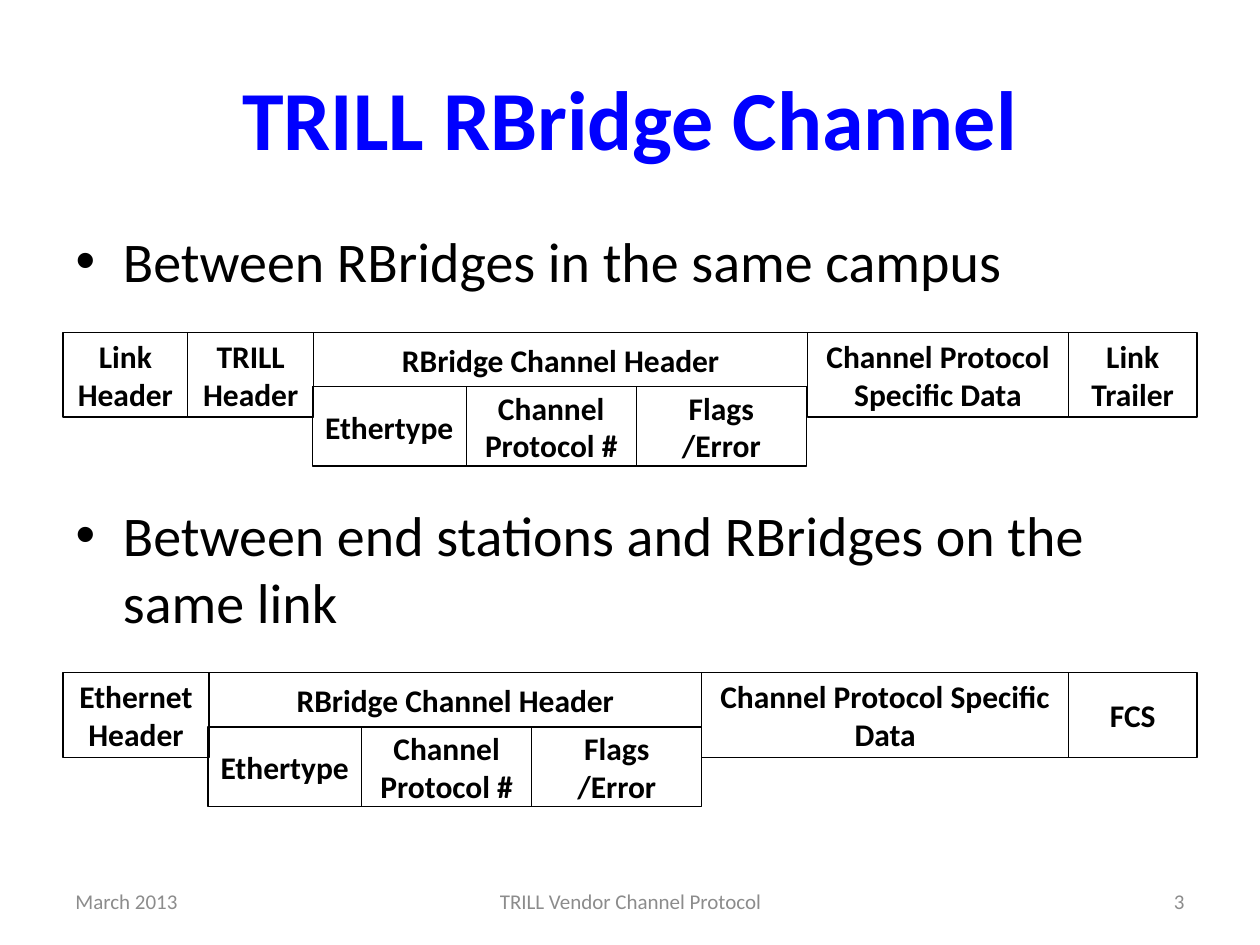
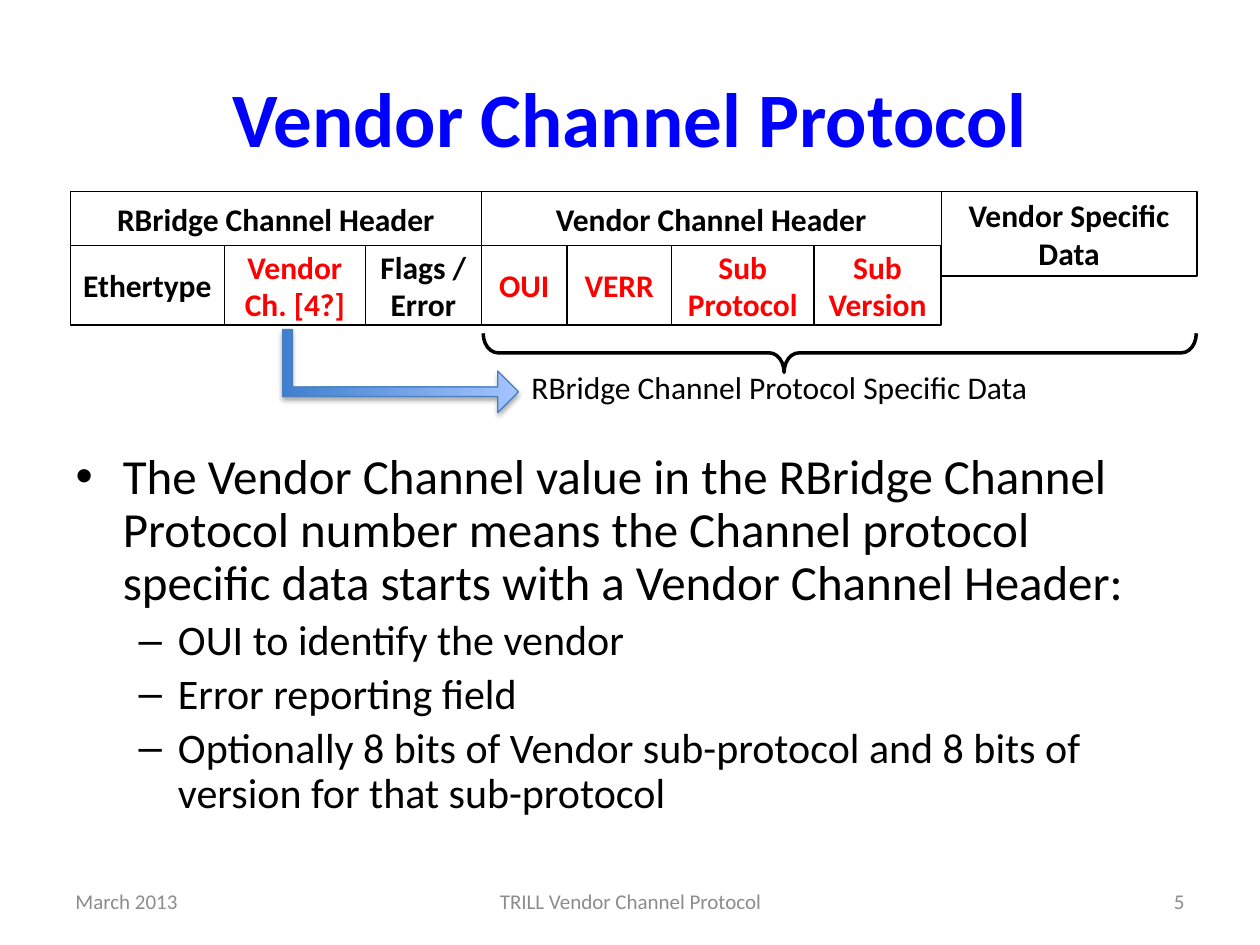
from itertools import accumulate
from lxml.etree import SubElement
from pptx import Presentation
from pptx.dml.color import RGBColor
from pptx.enum.shapes import MSO_SHAPE
from pptx.enum.text import MSO_ANCHOR, MSO_AUTO_SIZE, PP_ALIGN
from pptx.oxml.ns import qn
from pptx.util import Emu, Pt

PX = 9144
BLACK, BLUE, RED, GREY = "000000", "0000FF", "FF0000", "8C8C8C"
FULL, TOP, SUB = 67, 43, 63


def px(*lengths):
    return [Emu(n * PX) for n in lengths]


def rgb(color):
    return RGBColor.from_string(color)


class Deck:
    font = "Calibri"

    def __init__(self):
        self.prs = Presentation()
        self.prs.slide_width, self.prs.slide_height = px(1000, 750)
        self.s = None

    def style(self, p, size, color=BLACK, bold=False, align=None):
        p.alignment = align
        for r in p.runs:
            r.font.name = self.font
            r.font.size = Pt(size)
            r.font.bold = bold
            r.font.color.rgb = rgb(color)

    def place(self, sp, *box):
        sp.left, sp.top, sp.width, sp.height = px(*box)

    def slide(self, title, title_size, number):
        self.s = self.prs.slides.add_slide(self.prs.slide_layouts[1])
        sp = self.s.shapes.title
        self.place(sp, 50, 30, 900, 125)
        tf = sp.text_frame
        tf.text = title
        tf.auto_size = MSO_AUTO_SIZE.NONE
        tf.vertical_anchor = MSO_ANCHOR.MIDDLE
        self.style(tf.paragraphs[0], title_size, BLUE, True, PP_ALIGN.CENTER)
        for text, x, w, align in (
            ("March 2013", 50, 233, PP_ALIGN.LEFT),
            ("TRILL Vendor Channel Protocol", 342, 317, PP_ALIGN.CENTER),
            (number, 717, 233, PP_ALIGN.RIGHT),
        ):
            self.text(text, (x, 695, w, 40), 12, GREY, align)

    def text(self, text, box, size, color=BLACK, align=PP_ALIGN.LEFT):
        tf = self.s.shapes.add_textbox(*px(*box)).text_frame
        tf.word_wrap = True
        tf.vertical_anchor = MSO_ANCHOR.MIDDLE
        tf.text = text
        self.style(tf.paragraphs[0], size, color, align=align)

    def bullets(self, box, items, sizes, line_spacing=None, gap=None):
        sp = self.s.placeholders[1]
        self.place(sp, *box)
        tf = sp.text_frame
        tf.auto_size = MSO_AUTO_SIZE.NONE
        tf.text = "\n".join(text for text, level in items)
        for i, (p, (text, level)) in enumerate(zip(tf.paragraphs, items)):
            p.level = level
            p.line_spacing = line_spacing
            if gap and i:
                p.space_before = Pt(gap)
            self.style(p, sizes[level])

    def shape(self, kind, box, line_width=0.75, line=BLACK):
        sp = self.s.shapes.add_shape(kind, *px(*box))
        sp.shadow.inherit = False
        sp.fill.background()
        sp.line.color.rgb = rgb(line)
        sp.line.width = Pt(line_width)
        return sp

    def row(self, x, y, cells):
        widths = [w for text, w, h, color in cells]
        lefts = accumulate(widths, initial=x)
        for left, (text, w, h, color) in zip(lefts, cells):
            tf = self.shape(MSO_SHAPE.RECTANGLE, (left, y, w, h)).text_frame
            tf.word_wrap = True
            tf.vertical_anchor = MSO_ANCHOR.MIDDLE
            tf.text = text
            self.style(tf.paragraphs[0], 18, color, True, PP_ALIGN.CENTER)

    def channel_fields(self, x, y):
        self.row(x, y + TOP, [
            ("Ethertype", 122, SUB, BLACK),
            ("Channel Protocol #", 135, SUB, BLACK),
            ("Flags\v/Error", 135, SUB, BLACK),
        ])

    def brace(self, box):
        sp = self.shape(MSO_SHAPE.LEFT_BRACE, box, 2)
        sp.rotation = 270
        sp.adjustments[0], sp.adjustments[1] = 0.38, 0.422

    def bent_arrow(self, box):
        sp = self.shape(MSO_SHAPE.BENT_UP_ARROW, box, line="4B7EBC")
        sp.rotation = 90
        for i, value in enumerate((0.116, 0.25, 0.25)):
            sp.adjustments[i] = value
        sp.fill.gradient()
        sp.fill.gradient_angle = 90
        for stop, color in zip(sp.fill.gradient_stops, ("3F80CE", "A4C4FF")):
            stop.color.rgb = rgb(color)
        effects = sp._element.spPr.find(qn("a:effectLst"))
        shadow = SubElement(effects, qn("a:outerShdw"), blurRad=str(Pt(3.1)),
                            dist=str(Pt(1.8)), dir="5400000", rotWithShape="0")
        color = SubElement(shadow, qn("a:srgbClr"), val=BLACK)
        SubElement(color, qn("a:alpha"), val="35000")


def rbridge_channel(deck):
    deck.slide("TRILL RBridge Channel", 48, "3")
    deck.bullets((50, 175, 900, 520), [
        ("Between RBridges in the same campus", 0),
        ("Between end stations and RBridges on the same link", 0),
    ], (32,), gap=118)
    deck.row(50, 264, [
        ("Link Header", 99, FULL, BLACK),
        ("TRILL Header", 100, FULL, BLACK),
        ("RBridge Channel Header", 392, TOP, BLACK),
        ("Channel Protocol Specific Data", 207, FULL, BLACK),
        ("Link Trailer", 102, FULL, BLACK),
    ])
    deck.channel_fields(248, 264)
    deck.row(50, 534, [
        ("Ethernet Header", 116, FULL, BLACK),
        ("RBridge Channel Header", 391, TOP, BLACK),
        ("Channel Protocol Specific Data", 291, FULL, BLACK),
        ("FCS", 102, FULL, BLACK),
    ])
    deck.channel_fields(165, 534)


def vendor_channel(deck):
    deck.slide("Vendor Channel Protocol", 44, "5")
    deck.bullets((50, 354, 900, 316), [
        ("The Vendor Channel value in the RBridge Channel Protocol number means "
         "the Channel protocol specific data starts with a Vendor Channel Header:", 0),
        ("OUI to identify the vendor", 1),
        ("Error reporting field", 1),
        ("Optionally 8 bits of Vendor sub-protocol and 8 bits of version "
         "for that sub-protocol", 1),
    ], (28, 24), line_spacing=0.9)
    deck.row(56, 152, [
        ("RBridge Channel Header", 326, TOP, BLACK),
        ("Vendor Channel Header", 365, TOP, BLACK),
        ("Vendor Specific Data", 203, FULL, BLACK),
    ])
    deck.row(56, 152 + TOP, [
        ("Ethertype", 122, SUB, BLACK),
        ("Vendor\vCh. [4?]", 112, SUB, RED),
        ("Flags /Error", 92, SUB, BLACK),
        ("OUI", 68, SUB, RED),
        ("VERR", 83, SUB, RED),
        ("Sub Protocol", 113, SUB, RED),
        ("Sub Version", 101, SUB, RED),
    ])
    deck.brace((651, -3, 31, 566))
    deck.text("RBridge Channel Protocol Specific Data", (412, 287, 426, 40), 18)
    deck.bent_arrow((285, 201, 66, 187))


def main():
    deck = Deck()
    rbridge_channel(deck)
    vendor_channel(deck)
    deck.prs.save("out.pptx")


if __name__ == "__main__":
    main()
